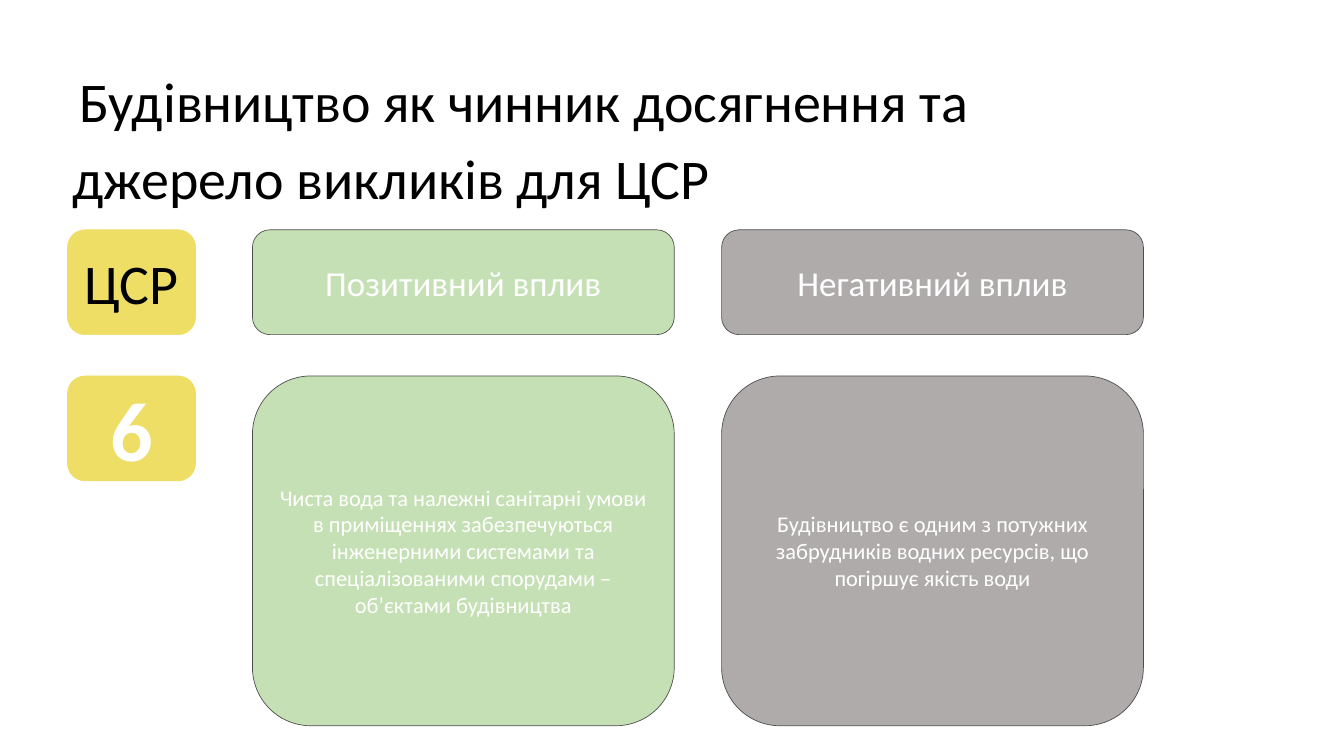
import pptx
import pptx.util
from pptx.dml.color import RGBColor
from pptx.enum.shapes import MSO_SHAPE
from pptx.enum.text import MSO_ANCHOR, PP_ALIGN

YELLOW = RGBColor(0xEE, 0xDE, 0x66)
GREEN = RGBColor(0xC5, 0xE0, 0xB4)
GRAY = RGBColor(0xAF, 0xAB, 0xAB)
OUTLINE = RGBColor(0x4D, 0x4D, 0x4D)
WHITE = RGBColor(0xFF, 0xFF, 0xFF)
BLACK = RGBColor(0, 0, 0)

Inches = pptx.util.Inches
Pt = pptx.util.Pt


def write(p, text, size=32, color=WHITE, bold=False, align=PP_ALIGN.CENTER):
    p.alignment = align
    r = p.add_run()
    r.text = text
    r.font.name = "Calibri"
    r.font.size = Pt(size)
    r.font.bold = bold
    r.font.color.rgb = color


prs = pptx.Presentation()
prs.slide_width, prs.slide_height = Inches(26.67), Inches(15)
s = prs.slides.add_slide(prs.slide_layouts[6])

# Grid: (left, width, fill, line) per column, (top, height) per row
columns = [
    (1.34, 2.54, YELLOW, YELLOW),
    (5.01, 8.37, GREEN, OUTLINE),
    (14.32, 8.37, GRAY, OUTLINE),
]
rows = [(4.56, 2.08), (7.46, 6.94)]
badge_height = rows[0][1]

# Text and its format for each cell
cells = [
    [
        ("ЦСР", dict(size=80, color=BLACK)),
        ("Позитивний вплив", dict(size=50)),
        ("Негативний вплив", dict(size=50)),
    ],
    [
        ("6", dict(size=120, bold=True)),
        ("Чиста вода та належні санітарні умови в приміщеннях забезпечуються "
         "інженерними системами та спеціалізованими спорудами – "
         "об’єктами будівництва", {}),
        ("Будівництво є одним з потужних забрудників водних ресурсів, "
         "що погіршує якість води", {}),
    ],
]

# Rounded boxes
for (top, height), row in zip(rows, cells):
    for col, (left, width, fill, line) in enumerate(columns):
        text, style = row[col]
        box_height = badge_height if col == 0 else height
        sp = s.shapes.add_shape(MSO_SHAPE.ROUNDED_RECTANGLE, Inches(left),
                                Inches(top), Inches(width), Inches(box_height))
        sp.shadow.inherit = False
        sp.fill.solid()
        sp.fill.fore_color.rgb = fill
        sp.line.color.rgb = line
        sp.line.width = Pt(1)
        tf = sp.text_frame
        tf.word_wrap = True
        tf.vertical_anchor = MSO_ANCHOR.MIDDLE
        write(tf.paragraphs[0], text, **style)

# Title
sp = s.shapes.add_textbox(Inches(columns[0][0]), Inches(1.17),
                          Inches(18.38), Inches(3.09))
tf = sp.text_frame
tf.word_wrap = False
title = [
    ("Будівництво як чинник досягнення та ", PP_ALIGN.CENTER),
    ("джерело викликів для ЦСР", PP_ALIGN.LEFT),
]
for i, (text, align) in enumerate(title):
    p = tf.add_paragraph() if i else tf.paragraphs[0]
    p.line_spacing = 1.07
    p.space_after = Pt(8)
    write(p, text, size=80, color=BLACK, align=align)

prs.save("out.pptx")
